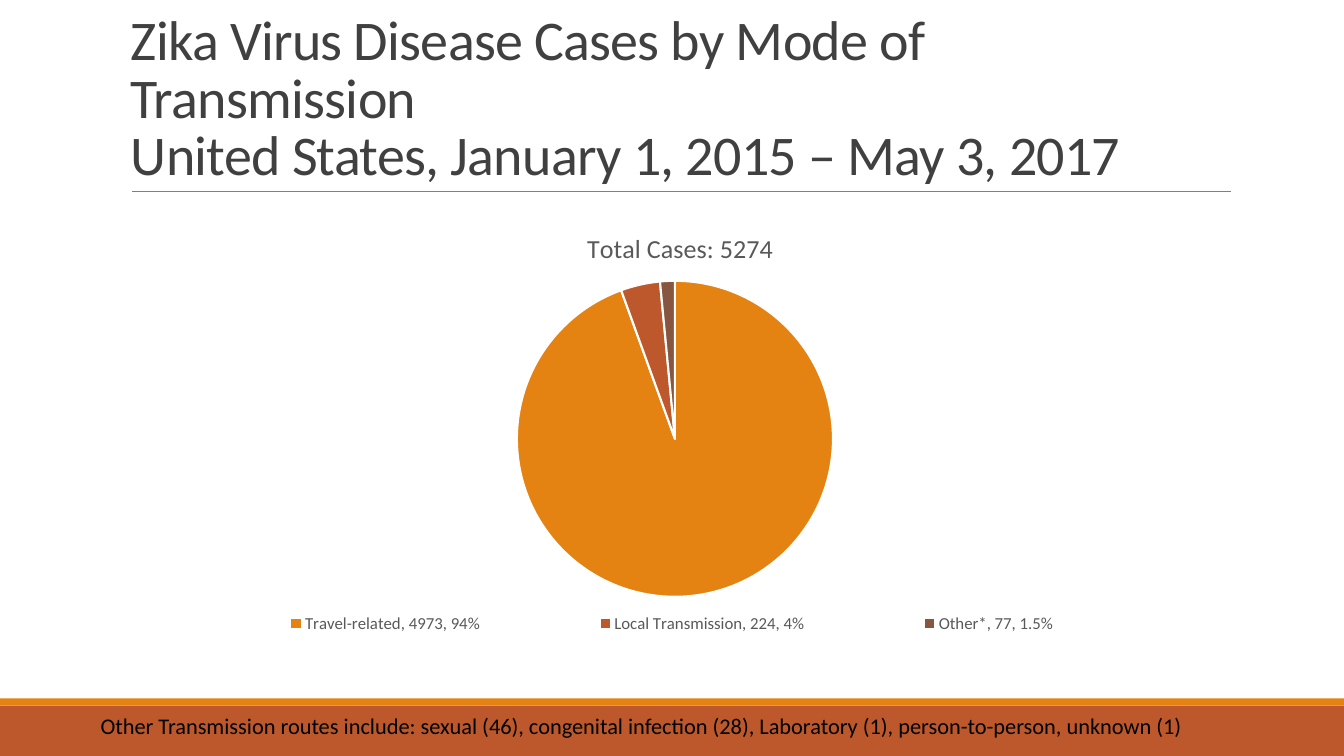
from dataclasses import dataclass
from lxml import etree
from pptx import Presentation
from pptx.chart.data import CategoryChartData as ChartData
from pptx.dml.color import RGBColor as RGB
from pptx.enum.chart import XL_CHART_TYPE as Kind, XL_LEGEND_POSITION as Side
from pptx.enum.shapes import MSO_CONNECTOR as Link, MSO_SHAPE as Shape
from pptx.enum.text import MSO_ANCHOR as Anchor
from pptx.oxml import parse_xml
from pptx.oxml.ns import nsdecls, qn
from pptx.util import Inches, Pt

TITLE = ("Zika Virus Disease Cases by Mode of Transmission\v"
         "United States, January 1, 2015 – May 3, 2017")
TOTAL = "Total Cases: 5274"
NOTE = ("Other Transmission routes include: sexual (46), congenital infection (28), "
        "Laboratory (1), person-to-person, unknown (1)")
CASES = {
    "Travel-related, 4973, 94%": 94,
    "Local Transmission, 224, 4%": 4,
    "Other*, 77, 1.5%": 1.5,
}


@dataclass(frozen=True)
class Theme:
    font: str = "Calibri"
    slices: tuple = ("E48312", "BD582C", "865640")
    title: str = "404040"
    label: str = "595959"
    rule: str = "808080"
    white: str = "FFFFFF"
    black: str = "000000"
    big: float = 40
    head: float = 18.6
    note: float = 16
    key: float = 12


THEME = Theme()
WIDE, HIGH = 13.33, 7.5
LEFT, BODY = 1.2, 11
INSET = 0.11
BAR, STRIPE = 0.5, 0.07
RULE = 1.9

deck = Presentation()
deck.slide_width, deck.slide_height = Inches(WIDE), Inches(HIGH)
slide = deck.slides.add_slide(deck.slide_layouts[6])
shapes = slide.shapes


def box(*sides):
    return [Inches(side) for side in sides]


def style(font, size, color):
    font.name, font.size, font.bold = THEME.font, Pt(size), False
    font.color.rgb = RGB.from_string(color)


def text(words, at, size, color, anchor=Anchor.TOP, lead=None, track=None):
    frame = shapes.add_textbox(*box(*at)).text_frame
    frame.word_wrap, frame.vertical_anchor = True, anchor
    para = frame.paragraphs[0]
    para.text, para.line_spacing = words, lead
    for run in para.runs:
        style(run.font, size, color)
        if track is not None:
            run.font._element.set("spc", str(round(track * 100)))


def band(top, tall, color):
    bar = shapes.add_shape(Shape.RECTANGLE, *box(0, top, WIDE, tall))
    bar.shadow.inherit = False
    bar.fill.solid()
    bar.fill.fore_color.rgb = RGB.from_string(color)
    bar.line.fill.background()


def place(part, inner=False, **shares):
    """Fix a chart part at shares of the chart's size."""
    old = part.find(qn("c:layout"))
    if old is not None:
        part.remove(old)
    modes = {"layoutTarget": "inner"} if inner else {}
    modes |= {"xMode": "edge", "yMode": "edge"} | shares
    rows = "".join(f'<c:{name} val="{val}"/>' for name, val in modes.items())
    layout = parse_xml(f'<c:layout {nsdecls("c")}><c:manualLayout>{rows}'
                       '</c:manualLayout></c:layout>')
    before = part.find(qn("c:tx"))
    if before is None:
        before = part.find(qn("c:legendPos"))
    if before is None:
        part.insert(0, layout)
    else:
        before.addnext(layout)


def pie(at):
    data = ChartData()
    data.categories = list(CASES)
    data.add_series("Series 1", list(CASES.values()))
    chart = shapes.add_chart(Kind.PIE, *box(*at), data).chart
    style(chart.font, 10, THEME.black)

    chart.has_title = True
    para = chart.chart_title.text_frame.paragraphs[0]
    para.text = TOTAL
    style(para.runs[0].font, THEME.head, THEME.label)

    chart.has_legend = True
    key = chart.legend
    key.position, key.include_in_layout = Side.BOTTOM, False
    style(key.font, THEME.key, THEME.label)

    plot = chart.plots[0]
    plot.vary_by_categories = True
    for i, color in enumerate(THEME.slices):
        look = plot.series[0].points[i].format
        look.fill.solid()
        look.fill.fore_color.rgb = RGB.from_string(color)
        look.line.color.rgb = RGB.from_string(THEME.white)
        look.line.width = Pt(1.5)

    area = chart._chartSpace.chart.plotArea
    place(area, inner=True, x=0.357, y=0.174, w=0.285, h=0.713)
    place(chart.chart_title._element, x=0.416, y=0.05)
    place(key._element, x=0.05, y=0.907, w=0.894, h=0.08)


band(HIGH - BAR, BAR, THEME.slices[1])
band(HIGH - BAR - STRIPE, STRIPE, THEME.slices[0])

rule = shapes.add_connector(
    Link.STRAIGHT, *box(LEFT + INSET, RULE, LEFT + BODY + 0.01, RULE))
rule.line.color.rgb = RGB.from_string(THEME.rule)
rule.line.width = Pt(0.5)
etree.SubElement(rule._element.spPr, qn("a:effectLst"))

text(TITLE, (LEFT, 0.31, BODY, RULE - 0.31), THEME.big, THEME.title,
     anchor=Anchor.BOTTOM, lead=0.85, track=-0.5)
pie((LEFT, 2.02, BODY, 4.4))
text(NOTE, (0.9, 7.02, 11.6, 0.37), THEME.note, THEME.black)

deck.save("out.pptx")
